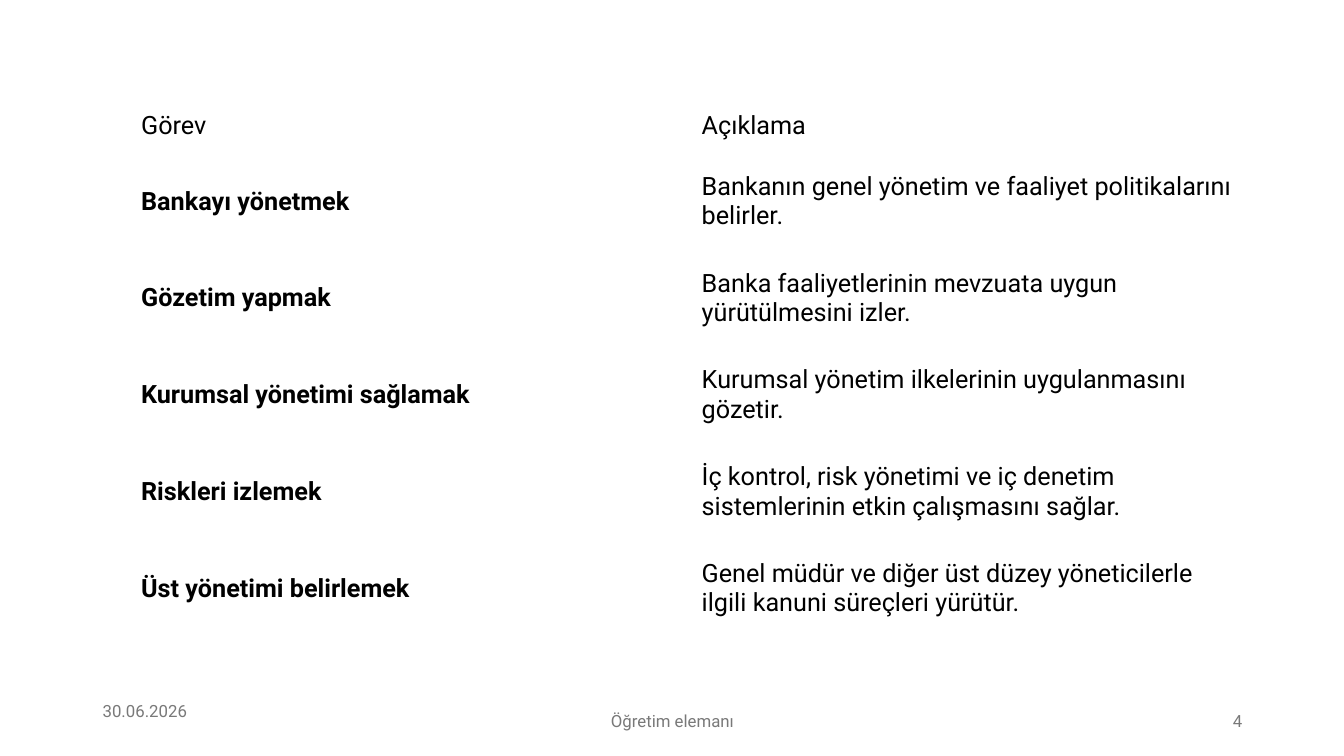
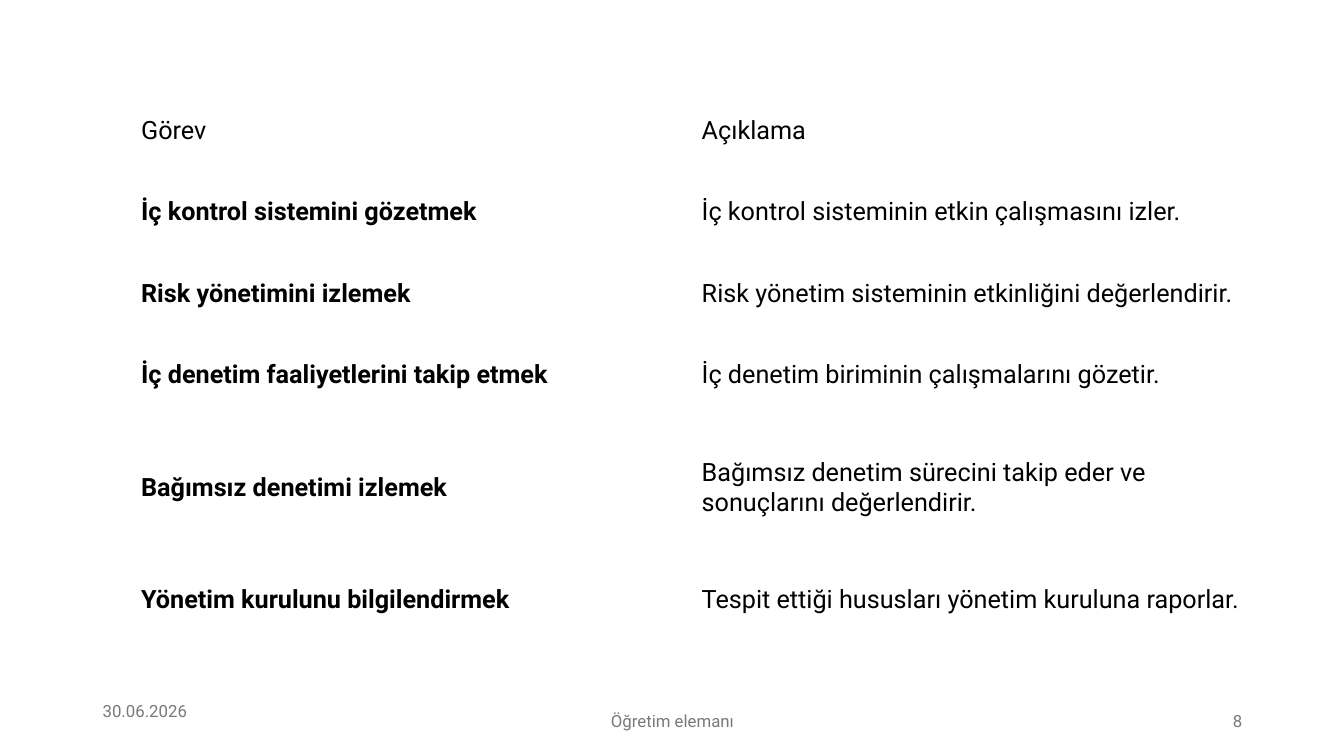
from pptx import Presentation
from pptx.dml.color import RGBColor
from pptx.enum.text import MSO_ANCHOR, PP_ALIGN
from pptx.util import Inches, Pt

FONT = "Roboto"
BLACK = RGBColor(0x00, 0x00, 0x00)
GRAY = RGBColor(0x79, 0x79, 0x79)
HEADER = ("Görev", "Açıklama")
TABLE_LEFT, COLUMN_WIDTH = 1.3, 5.56

# Slide content: number, table top, row heights, duties
SLIDES = [
    ("4", 0.97, [0.55] + [0.96] * 5, [
        ("Bankayı yönetmek", "Bankanın genel yönetim ve faaliyet politikalarını belirler."),
        ("Gözetim yapmak", "Banka faaliyetlerinin mevzuata uygun yürütülmesini izler."),
        ("Kurumsal yönetimi sağlamak", "Kurumsal yönetim ilkelerinin uygulanmasını gözetir."),
        ("Riskleri izlemek",
         "İç kontrol, risk yönetimi ve iç denetim sistemlerinin etkin çalışmasını sağlar."),
        ("Üst yönetimi belirlemek",
         "Genel müdür ve diğer üst düzey yöneticilerle ilgili kanuni süreçleri yürütür."),
    ]),
    ("8", 0.89, [0.81] * 4 + [1.42, 0.81], [
        ("İç kontrol sistemini gözetmek", "İç kontrol sisteminin etkin çalışmasını izler."),
        ("Risk yönetimini izlemek", "Risk yönetim sisteminin etkinliğini değerlendirir."),
        ("İç denetim faaliyetlerini takip etmek", "İç denetim biriminin çalışmalarını gözetir."),
        ("Bağımsız denetimi izlemek",
         "Bağımsız denetim sürecini takip eder ve sonuçlarını değerlendirir."),
        ("Yönetim kurulunu bilgilendirmek", "Tespit ettiği hususları yönetim kuruluna raporlar."),
    ]),
]


def format_text(paragraph, size, color, bold=False):
    for span in paragraph.runs:
        span.font.name = FONT
        span.font.size = Pt(size)
        span.font.color.rgb = color
        span.font.bold = bold


deck = Presentation()
deck.slide_width = Inches(13.33)
deck.slide_height = Inches(7.5)

for number, top, heights, duties in SLIDES:
    page = deck.slides.add_slide(deck.slide_layouts[6])

    # Duty table
    table = page.shapes.add_table(
        len(heights), len(HEADER), Inches(TABLE_LEFT), Inches(top),
        Inches(COLUMN_WIDTH * len(HEADER)), Inches(sum(heights))).table
    table.first_row = False
    table.horz_banding = False
    for column in table.columns:
        column.width = Inches(COLUMN_WIDTH)
    for row_index, (height, texts) in enumerate(zip(heights, [HEADER] + duties)):
        table.rows[row_index].height = Inches(height)
        for column_index, text in enumerate(texts):
            cell = table.cell(row_index, column_index)
            cell.fill.background()
            cell.vertical_anchor = MSO_ANCHOR.MIDDLE
            cell.text_frame.text = text
            is_duty = row_index > 0 and column_index == 0
            format_text(cell.text_frame.paragraphs[0], 18, BLACK, is_duty)

    # Footer: date (slightly raised), lecturer, slide number
    for text, left, footer_top, width, alignment in (
            ("30.06.2026", 0.92, 6.85, 3, PP_ALIGN.LEFT),
            ("Öğretim elemanı", 4.42, 6.95, 4.5, PP_ALIGN.CENTER),
            (number, 9.42, 6.95, 3, PP_ALIGN.RIGHT)):
        box = page.shapes.add_textbox(
            Inches(left), Inches(footer_top), Inches(width), Inches(0.4))
        frame = box.text_frame
        frame.word_wrap = True
        frame.vertical_anchor = MSO_ANCHOR.MIDDLE
        frame.text = text
        para = frame.paragraphs[0]
        para.alignment = alignment
        format_text(para, 12, GRAY)

deck.save("out.pptx")
